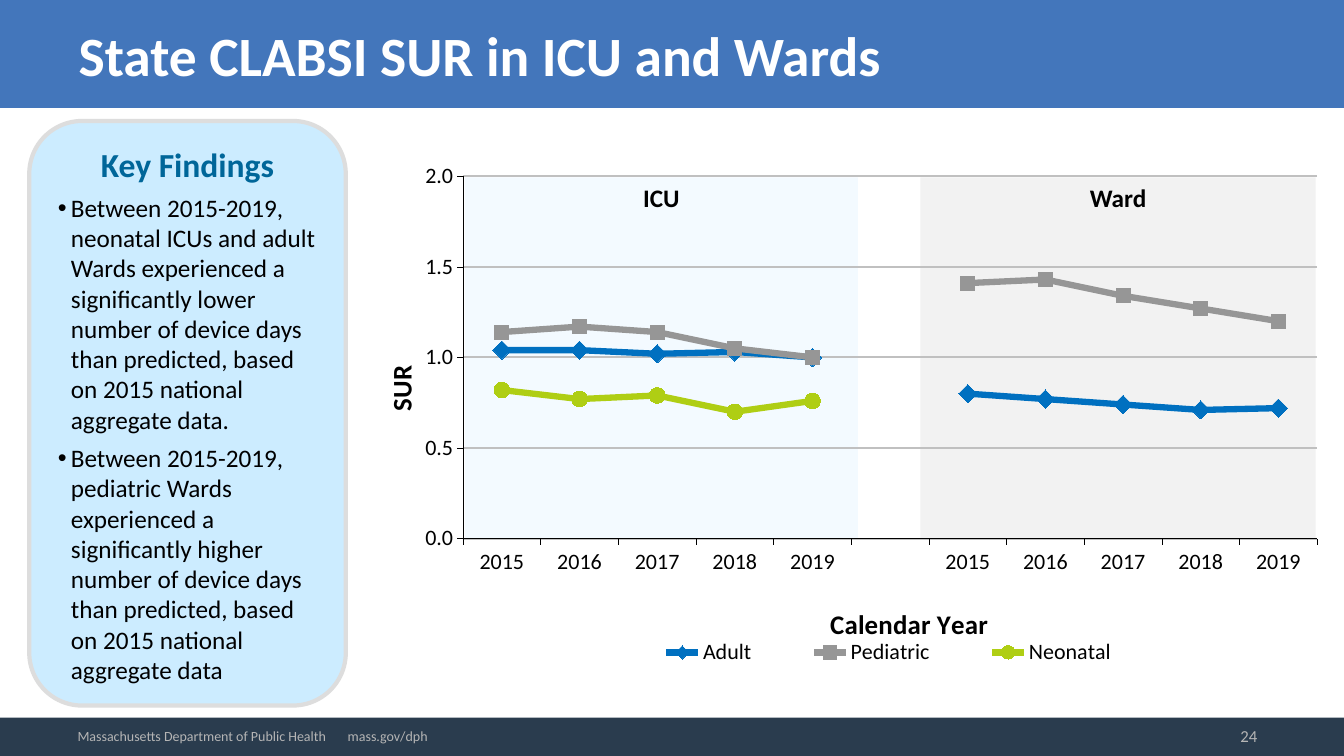
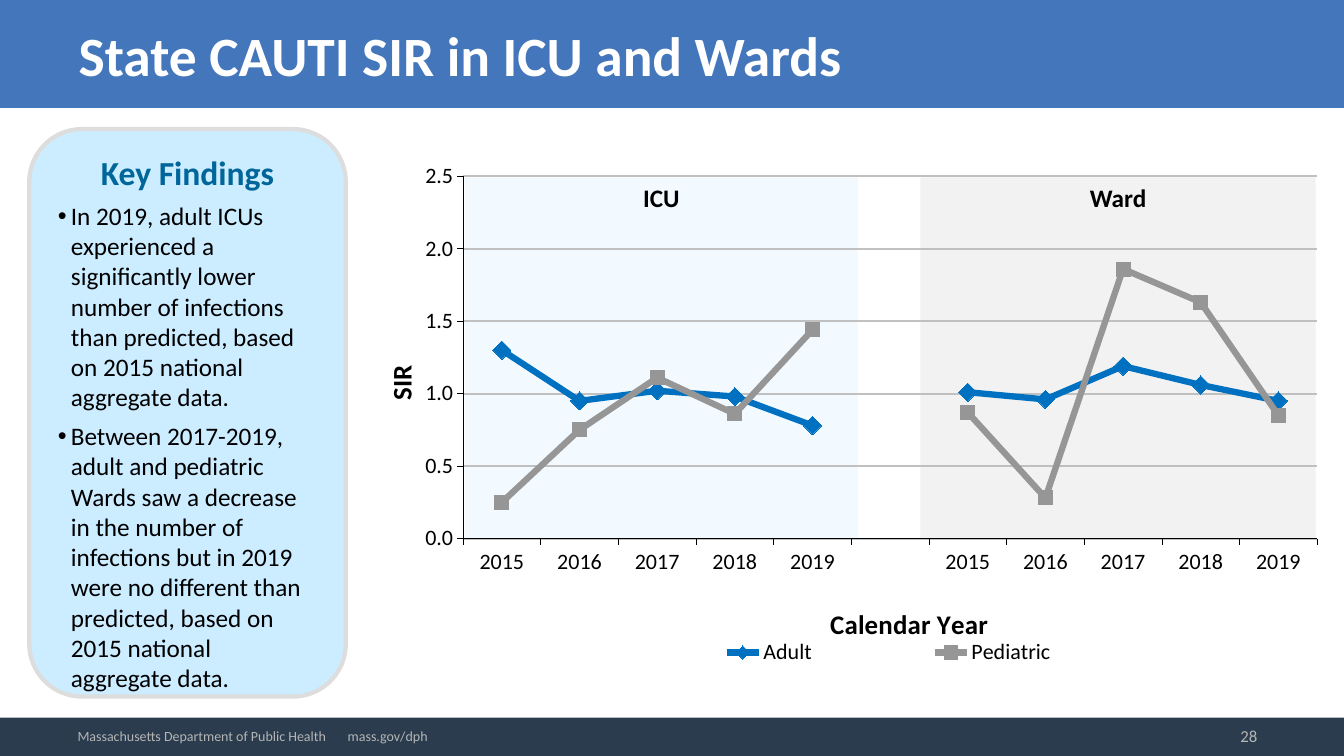
import pptx
import pptx.chart.data
import pptx.dml.color
import pptx.enum.chart
import pptx.enum.shapes
import pptx.enum.text
import pptx.oxml
import pptx.oxml.ns
import pptx.util
from lxml import etree

Pt, Inches = pptx.util.Pt, pptx.util.Inches
ALIGN = pptx.enum.text.PP_ALIGN
ANCHOR = pptx.enum.text.MSO_ANCHOR
SHAPE = pptx.enum.shapes.MSO_SHAPE
MARKER = pptx.enum.chart.XL_MARKER_STYLE
qn = pptx.oxml.ns.qn

# Shared look; lengths are columns and rows of a 100 x 100 grid
WIDTH, HEIGHT = Inches(13.33), Inches(7.5)
FONT = "Calibri"
COLORS = {
    "header": "4376BB", "footer": "2A3C4E", "white": "FFFFFF", "black": "000000",
    "muted": "B5B5B5", "panel": "CCECFF", "panel_line": "DDDDDD", "heading": "006699",
    "ward": "F2F2F2", "icu": "F3FAFF", "grid": "C0C0C0",
    "adult": "0070C0", "pediatric": "969696", "neonatal": "AFCE14",
}
SERIES_STYLE = {
    "Adult": ("adult", MARKER.DIAMOND, 13),
    "Pediatric": ("pediatric", MARKER.SQUARE, 10),
    "Neonatal": ("neonatal", MARKER.CIRCLE, 11),
}
YEARS = ["2015", "2016", "2017", "2018", "2019"]
AXIS_SIZE, AXIS_TITLE_SIZE = 15.7, 19.2

SLIDES = [
    dict(
        title="State CLABSI SUR in ICU and Wards", number="24",
        panel_top=16, panel_rows=77.33, measure="SUR", maximum=2,
        findings=[
            "Between 2015-2019, neonatal ICUs and adult Wards experienced a significantly "
            "lower number of device days than predicted, based on 2015 national aggregate data.",
            "Between 2015-2019, pediatric Wards experienced a significantly higher number of "
            "device days than predicted, based on 2015 national aggregate data",
        ],
        series={
            "Adult": ([1.04, 1.04, 1.02, 1.03, 1], [0.8, 0.77, 0.74, 0.71, 0.72]),
            "Pediatric": ([1.14, 1.17, 1.14, 1.05, 1], [1.41, 1.43, 1.34, 1.27, 1.2]),
            "Neonatal": ([0.82, 0.77, 0.79, 0.7, 0.76], [None] * 5),
        },
    ),
    dict(
        title="State CAUTI SIR in ICU and Wards", number="28",
        panel_top=17.07, panel_rows=75.07, measure="SIR", maximum=2.5,
        findings=[
            "In 2019, adult ICUs experienced a significantly lower number of infections than "
            "predicted, based on 2015 national aggregate data.",
            "Between 2017-2019, adult and pediatric Wards saw a decrease in the number of "
            "infections but in 2019 were no different than predicted, based on 2015 national "
            "aggregate data.",
        ],
        series={
            "Adult": ([1.3, 0.95, 1.02, 0.98, 0.78], [1.01, 0.96, 1.19, 1.06, 0.95]),
            "Pediatric": ([0.25, 0.75, 1.11, 0.86, 1.44], [0.87, 0.28, 1.86, 1.63, 0.85]),
        },
    ),
]


def place(col, row, cols, rows):
    return (round(col * WIDTH / 100), round(row * HEIGHT / 100),
            round(cols * WIDTH / 100), round(rows * HEIGHT / 100))


def rgb(name):
    return pptx.dml.color.RGBColor.from_string(COLORS[name])


# Text
def set_font(font, size, color="black", bold=False):
    font.name, font.size, font.bold = FONT, Pt(size), bold
    font.color.rgb = rgb(color)


def write(tf, text, *, size, color="black", bold=False, align=ALIGN.LEFT,
          after=0, bullet=False, tab=None, new=False):
    p = tf.add_paragraph() if new else tf.paragraphs[0]
    pPr = p._p.get_or_add_pPr()
    if bullet:
        indent = Inches(0.13)
        pPr.set("marL", str(indent))
        pPr.set("indent", str(-indent))
        etree.SubElement(pPr, qn("a:buFont"), typeface="Arial")
        etree.SubElement(pPr, qn("a:buChar"), char="•")
    if tab:
        tabs = etree.SubElement(pPr, qn("a:tabLst"))
        etree.SubElement(tabs, qn("a:tab"), pos=str(Inches(tab)), algn="l")
    p.alignment, p.space_after = align, Pt(after)
    r = p.add_run()
    r.text = text
    set_font(r.font, size, color, bold)


def add_label(slide, box, text, **fmt):
    tf = slide.shapes.add_textbox(*place(*box)).text_frame
    tf.word_wrap, tf.vertical_anchor = True, ANCHOR.MIDDLE
    write(tf, text, **fmt)


# Shapes
def add_block(slide, box, fill, kind=SHAPE.RECTANGLE):
    sp = slide.shapes.add_shape(kind, *place(*box))
    sp.shadow.inherit = False
    sp.fill.solid()
    sp.fill.fore_color.rgb = rgb(fill)
    sp.line.fill.background()
    sp.text_frame.word_wrap = True
    sp.text_frame.vertical_anchor = ANCHOR.TOP
    return sp


def add_bands(slide):
    """Put the header and footer bands on the layout, behind its placeholders."""
    tree = slide.slide_layout.element.cSld.spTree
    for box, fill in [((0, 0, 100, 14.27), "header"), ((0, 94.93, 100, 5.07), "footer")]:
        tree.insert(2, add_block(slide, box, fill).element)


def add_title(slide, text):
    sp = slide.shapes.title
    sp.left, sp.top, sp.width, sp.height = place(5.1, 2, 65.1, 10.27)
    tf = sp.text_frame
    tf.auto_size = pptx.enum.text.MSO_AUTO_SIZE.NONE
    tf.vertical_anchor = ANCHOR.MIDDLE
    write(tf, text, size=39.6, color="white", bold=True)


def add_footer(slide, number):
    add_label(slide, (71.86, 94.67, 22.43, 5.33), number, size=12, color="muted",
              align=ALIGN.RIGHT)
    add_label(slide, (5.03, 94.93, 31.28, 4.93),
              "Massachusetts Department of Public Health\tmass.gov/dph",
              size=10, color="muted", tab=2.68)


def add_findings(slide, top, rows, findings):
    sp = add_block(slide, (2.18, top, 23.55, rows), "panel", SHAPE.ROUNDED_RECTANGLE)
    sp.line.color.rgb, sp.line.width = rgb("panel_line"), Pt(3)
    tf = sp.text_frame
    tf.margin_left = tf.margin_right = Inches(0.13)
    tf.margin_top = tf.margin_bottom = Inches(0.07)
    write(tf, "Key Findings", size=24, color="heading", bold=True, align=ALIGN.CENTER, after=6)
    for finding in findings:
        write(tf, finding, size=18, after=6, bullet=True, new=True)


def add_zone(slide, col, cols, name, fill):
    sp = add_block(slide, (col, 23.47, cols, 47.87), fill)
    write(sp.text_frame, name, size=18, bold=True, align=ALIGN.CENTER)


# Chart
def set_layout(element, index, inner=False, **shares):
    """Place a chart part by shares of the chart's size."""
    for old in element.findall(qn("c:layout")):
        element.remove(old)
    layout = etree.Element(qn("c:layout"))
    manual = etree.SubElement(layout, qn("c:manualLayout"))
    if inner:
        etree.SubElement(manual, qn("c:layoutTarget"), val="inner")
    for mode in ("xMode", "yMode"):
        etree.SubElement(manual, qn("c:" + mode), val="edge")
    for key, share in shares.items():
        etree.SubElement(manual, qn("c:" + key), val=str(share))
    element.insert(index, layout)


def no_fill():
    sp_pr = etree.Element(qn("c:spPr"))
    etree.SubElement(sp_pr, qn("a:noFill"))
    return sp_pr


def format_axis(axis, title, x, y, rotation):
    axis.major_tick_mark = pptx.enum.chart.XL_TICK_MARK.OUTSIDE
    axis.minor_tick_mark = pptx.enum.chart.XL_TICK_MARK.NONE
    axis.format.line.color.rgb, axis.format.line.width = rgb("black"), Pt(0.36)
    set_font(axis.tick_labels.font, AXIS_SIZE)
    tf = axis.axis_title.text_frame
    write(tf, title, size=AXIS_TITLE_SIZE, bold=True, align=ALIGN.CENTER)
    element = axis.axis_title._element
    body = next(element.iter(qn("a:bodyPr")))
    body.set("rot", str(rotation * 60000))
    body.set("vert", "horz")
    set_layout(element, 1, x=x, y=y)


def format_series(series):
    color, marker, size = SERIES_STYLE[series.name]
    series.smooth = False
    series.format.line.color.rgb, series.format.line.width = rgb(color), Pt(4.5)
    series.marker.style, series.marker.size = marker, size
    series.marker.format.fill.solid()
    series.marker.format.fill.fore_color.rgb = rgb(color)
    series.marker.format.line.color.rgb = rgb(color)


def add_rate_chart(slide, measure, maximum, series):
    data = pptx.chart.data.CategoryChartData(number_format="0.00")
    data.categories = YEARS + [""] + YEARS
    for name, (icu, ward) in series.items():
        data.add_series(name, icu + [None] + ward)
    chart = slide.shapes.add_chart(pptx.enum.chart.XL_CHART_TYPE.LINE_MARKERS,
                                   *place(26.63, 20, 72.47, 69.07), data).chart
    chart.has_title = False
    set_font(chart.font, AXIS_TITLE_SIZE, bold=True)

    # Axes and gridlines
    format_axis(chart.category_axis, "Calendar Year", 0.48, 0.86, 0)
    axis = chart.value_axis
    format_axis(axis, measure, 0.02, 0.4, -90)
    axis.minimum_scale, axis.maximum_scale, axis.major_unit = 0, maximum, 0.5
    axis.tick_labels.number_format = "0.0"
    axis.tick_labels.number_format_is_linked = False
    grid = axis.major_gridlines.format.line
    grid.color.rgb, grid.width = rgb("grid"), Pt(1.42)

    # Series and legend
    chart.plots[0].vary_by_categories = False
    for line in chart.plots[0].series:
        format_series(line)
    chart.has_legend = True
    legend = chart.legend
    legend.position = pptx.enum.chart.XL_LEGEND_POSITION.BOTTOM
    legend.include_in_layout = False
    set_font(legend.font, AXIS_SIZE)
    set_layout(legend._element, 1, x=0.26, y=0.92, w=0.57, h=0.08)

    # Clear background so that the zones show through
    chart_element = chart.element.find(qn("c:chart"))
    plot_area = chart_element.find(qn("c:plotArea"))
    set_layout(plot_area, 0, inner=True, x=0.108, y=0.048, w=0.877, h=0.694)
    plot_area.append(no_fill())
    chart_element.addnext(no_fill())


def main():
    prs = pptx.Presentation()
    prs.slide_width, prs.slide_height = WIDTH, HEIGHT
    for index, content in enumerate(SLIDES):
        slide = prs.slides.add_slide(prs.slide_layouts[5])
        if index == 0:
            add_bands(slide)
        add_findings(slide, content["panel_top"], content["panel_rows"], content["findings"])
        add_title(slide, content["title"])
        add_footer(slide, content["number"])
        add_zone(slide, 68.49, 29.41, "Ward", "ward")
        add_zone(slide, 34.58, 29.26, "ICU", "icu")
        add_rate_chart(slide, content["measure"], content["maximum"], content["series"])
    prs.save("out.pptx")


if __name__ == "__main__":
    main()
